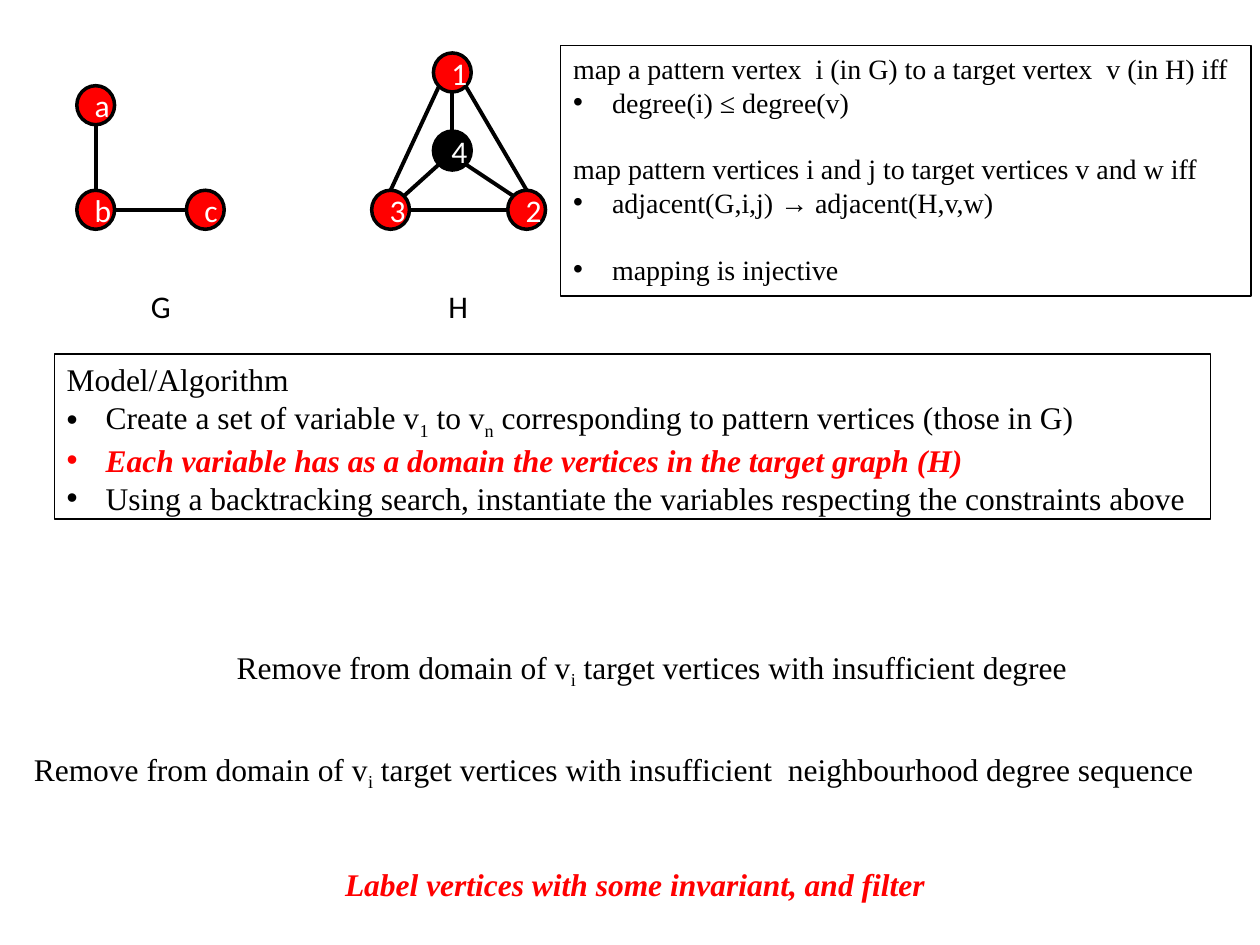
"""Build the slide on mapping pattern graph G into target graph H."""
from math import cos, radians, sin

from lxml.etree import SubElement
from pptx import Presentation
from pptx.dml.color import RGBColor
from pptx.enum.shapes import MSO_CONNECTOR, MSO_SHAPE
from pptx.enum.text import MSO_ANCHOR, PP_ALIGN
from pptx.oxml.ns import qn
from pptx.util import Inches, Pt

RED = RGBColor(255, 0, 0)
BLACK = RGBColor(0, 0, 0)
WHITE = RGBColor(255, 255, 255)
SERIF = "Times New Roman"
SANS = "Calibri"
WIDE, HIGH = 0.3, 0.31


def write(para, text, size, font, color, strong=False):
    for num, part in enumerate(text.split("|")):
        run = para.add_run()
        run.text = part
        run.font.size = Pt(size)
        run.font.name = font
        run.font.color.rgb = color
        run.font.bold = run.font.italic = strong
        if num % 2:
            run.font._element.set("baseline", "-25000")


def add_text(box, lines, size, font=SERIF, border=False):
    frame = slide.shapes.add_textbox(*map(Inches, box))
    if border:
        frame.line.color.rgb = BLACK
        frame.line.width = Pt(0.75)
    body = frame.text_frame
    body.word_wrap = True
    for num, (text, bullet, gap, strong) in enumerate(lines):
        para = body.add_paragraph() if num else body.paragraphs[0]
        para.space_before = Pt(gap)
        if bullet:
            props = para._p.get_or_add_pPr()
            props.set("marL", str(Inches(0.31)))
            props.set("indent", str(Inches(-0.31)))
            SubElement(props, qn("a:buFont")).set("typeface", "Arial")
            SubElement(props, qn("a:buChar")).set("char", "•")
        write(para, text, size, font, RED if strong else BLACK, strong)


deck = Presentation()
deck.slide_width, deck.slide_height = Inches(10), Inches(7.5)
slide = deck.slides.add_slide(deck.slide_layouts[6])

nodes = {
    "a": (0.61, 0.68), "b": (0.61, 1.51), "c": (1.48, 1.51),
    "1": (3.44, 0.42), "2": (4.03, 1.51), "3": (2.95, 1.51), "4": (3.44, 1.04),
}
for name, (left, top) in nodes.items():
    node = slide.shapes.add_shape(
        MSO_SHAPE.OVAL, Inches(left), Inches(top), Inches(WIDE), Inches(HIGH))
    node.shadow.inherit = False
    node.fill.solid()
    node.fill.fore_color.rgb = BLACK if name == "4" else RED
    node.line.color.rgb = BLACK
    node.line.width = Pt(2)
    node.text_frame.word_wrap = True
    node.text_frame.vertical_anchor = MSO_ANCHOR.MIDDLE
    para = node.text_frame.paragraphs[0]
    para.alignment = PP_ALIGN.CENTER
    write(para, name, 18, SANS, WHITE)

edges = [
    ("a", 270, "b", 90), ("b", 0, "c", 180),
    ("1", 225, "3", 90), ("3", 0, "2", 180), ("1", 315, "2", 90),
    ("1", 270, "4", 90), ("4", 315, "2", 135), ("3", 45, "4", 225),
]
for start, out, end, into in edges:
    ends = []
    for name, turn in ((start, out), (end, into)):
        left, top = nodes[name]
        ends.append(Inches(left + WIDE / 2 * (1 + cos(radians(turn)))))
        ends.append(Inches(top + HIGH / 2 * (1 - sin(radians(turn)))))
    edge = slide.shapes.add_connector(MSO_CONNECTOR.STRAIGHT, *ends)
    edge.line.color.rgb = BLACK
    edge.line.width = Pt(2.25)
    SubElement(edge._element.spPr, qn("a:effectLst"))

for name, left in (("G", 1.1), ("H", 3.46)):
    add_text((left, 2.23, 0.23, 0.26), [(name, False, 0, False)], 18, SANS)

add_text((0.43, 2.81, 9.18, 1.31), [
    ("Model/Algorithm", False, 0, False),
    ("Create a set of variable v|1| to v|n| corresponding to pattern vertices (those in G)",
     True, 0, False),
    ("Each variable has as a domain the vertices in the target graph (H)", True, 0, True),
    ("Using a backtracking search, instantiate the variables respecting the constraints above",
     True, 0, False),
], 18, border=True)

notes = [
    ((1.78, 5.09, 6.87, 0.4),
     "Remove from domain of v|i| target vertices with insufficient degree", False),
    ((0.17, 5.9, 9.71, 0.4),
     "Remove from domain of v|i| target vertices with insufficient  neighbourhood degree sequence",
     False),
    ((2.64, 6.82, 4.85, 0.4), "Label vertices with some invariant, and filter", True),
]
for box, text, strong in notes:
    add_text(box, [(text, False, 0, strong)], 18)

add_text((4.45, 0.36, 5.48, 1.99), [
    ("map a pattern vertex  i (in G) to a target vertex  v (in H) iff", False, 0, False),
    ("degree(i) ≤ degree(v)", True, 0, False),
    ("map pattern vertices i and j to target vertices v and w iff", False, 19, False),
    ("adjacent(G,i,j) → adjacent(H,v,w)", True, 0, False),
    ("mapping is injective", True, 19, False),
], 16, border=True)

deck.save("out.pptx")
